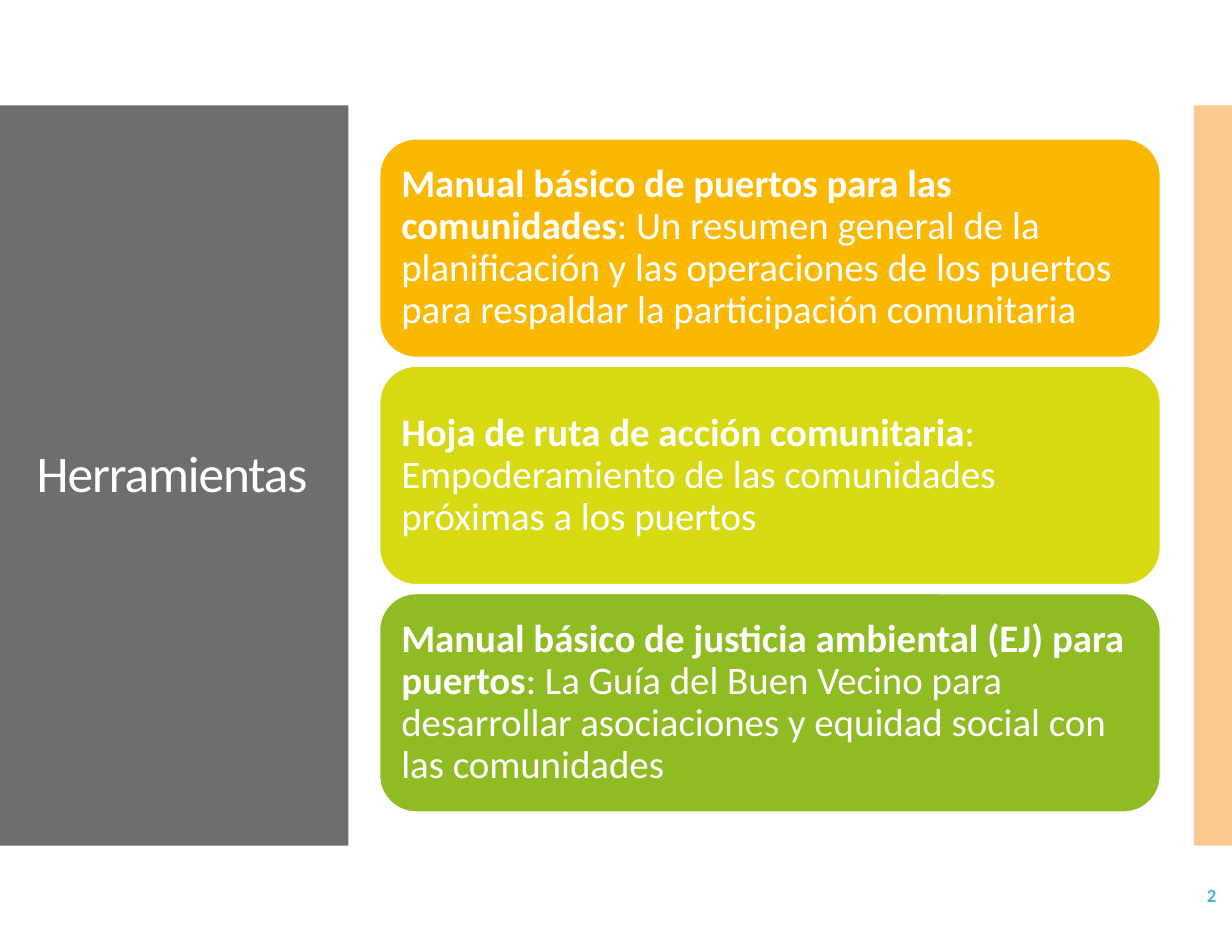
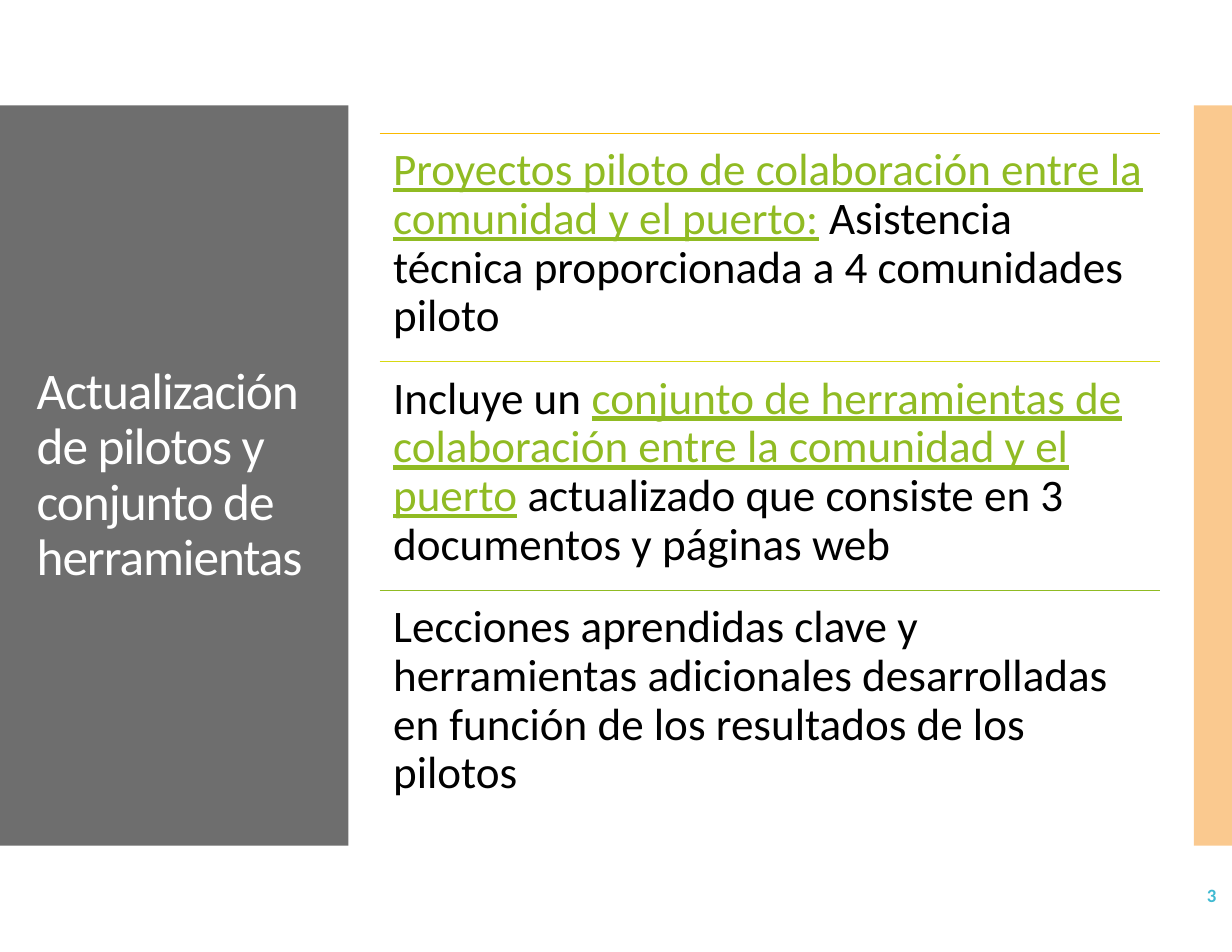
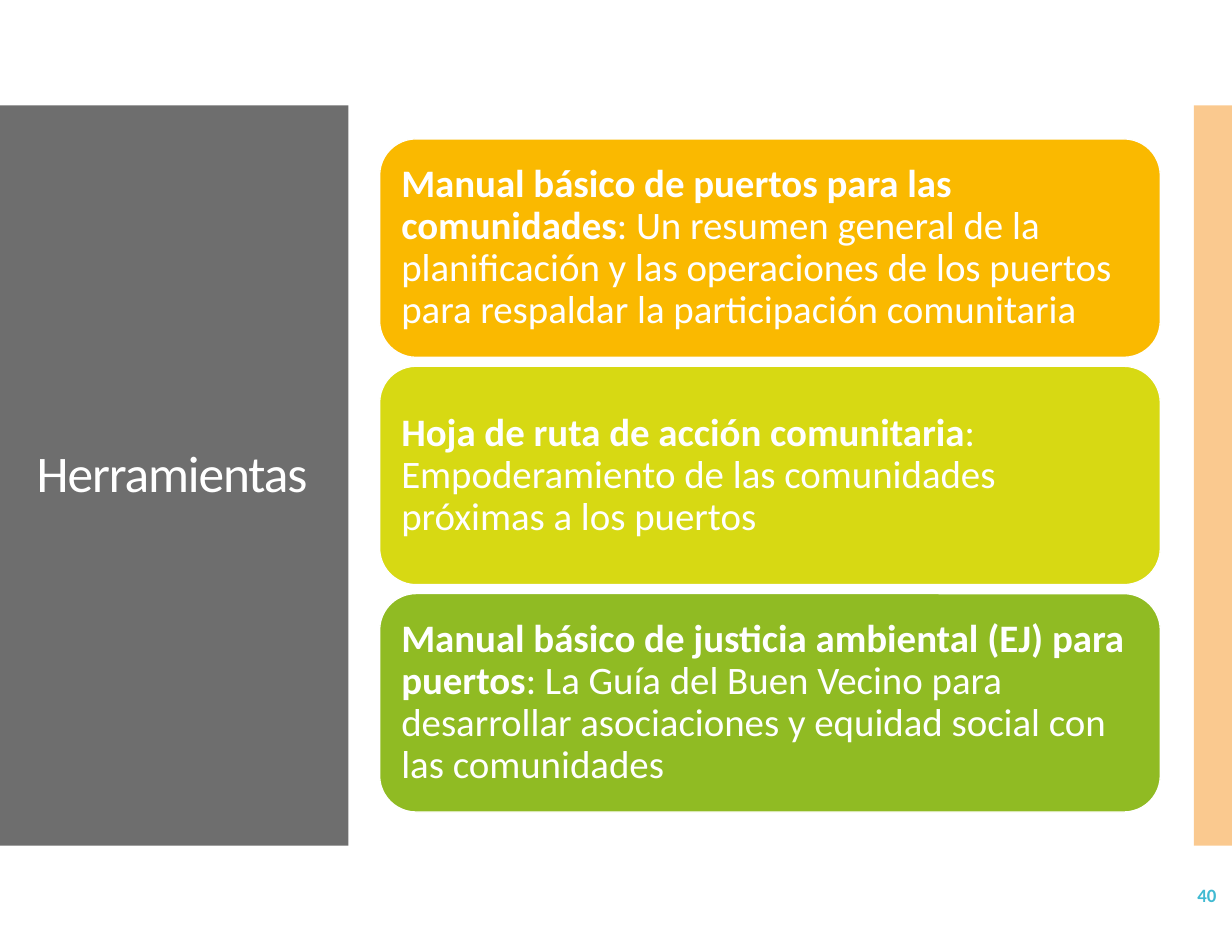
from lxml import etree
from pptx import Presentation
from pptx.dml.color import RGBColor
from pptx.enum import shapes, text
from pptx.oxml import ns
from pptx.util import Inches, Pt

HUE = {
    "panel": "6E6E6E", "edge": "F79421", "page": "40BAD2",
    "white": "FFFFFF", "black": "000000",
    "gold": "FAB900", "lime": "D7D913", "green": "90BB23",
}
TRIO = ("gold", "lime", "green")
FONT = "Calibri"

# Boxes: left, top, width, height in inches
PANEL = (0, 0.94, 3.11, 6.61)
EDGE = (10.66, 0.94, 0.34, 6.61)
TITLE = (0.23, 1.48, 2.77, 5.54)
PAGE = (9.59, 7.77, 1.38, 0.44)
CARDS = (3.39, 1.24, 6.97, 6.01)
ROWS = (3.39, 1.19, 6.97, 6.12)

# Each entry: bold lead, plain rest
TOOLS = [
    ("Manual básico de puertos para las comunidades",
     ": Un resumen general de la planificación y las operaciones de los "
     "puertos para respaldar la participación comunitaria"),
    ("Hoja de ruta de acción comunitaria",
     ": Empoderamiento de las comunidades próximas a los puertos"),
    ("Manual básico de justicia ambiental (EJ) para puertos",
     ": La Guía del Buen Vecino para desarrollar asociaciones y equidad "
     "social con las comunidades"),
]

# Each entry: pieces of text, True where underlined
PILOTS = [
    [("Proyectos piloto de colaboración entre la comunidad y el puerto:", True),
     (" Asistencia técnica proporcionada a 4 comunidades piloto", False)],
    [("Incluye un ", False),
     ("conjunto de herramientas de colaboración entre la comunidad y el "
      "puerto", True),
     (" actualizado que consiste en 3 documentos y páginas web", False)],
    [("Lecciones aprendidas clave y herramientas adicionales desarrolladas "
      "en función de los resultados de los pilotos", False)],
]


def tint(name):
    return RGBColor.from_string(HUE[name])


def split(box, count, gap=0):
    """Cut a box into equal rows."""
    x, y, w, h = box
    step = (h + gap) / count
    return [(x, y + i * step, w, step - gap) for i in range(count)]


def block(slide, box, hue, kind=shapes.MSO_SHAPE.RECTANGLE):
    shape = slide.shapes.add_shape(kind, *map(Inches, box))
    shape.shadow.inherit = False
    shape.fill.solid()
    shape.fill.fore_color.rgb = tint(hue)
    shape.line.fill.background()
    return shape


def setup(shape, size, hue, pad=(0.1, 0.05), anchor=text.MSO_ANCHOR.MIDDLE):
    """Prepare the text frame and return its paragraph."""
    frame = shape.text_frame
    frame.word_wrap = True
    frame.vertical_anchor = anchor
    frame.margin_left = frame.margin_right = Inches(pad[0])
    frame.margin_top = frame.margin_bottom = Inches(pad[1])
    para = frame.paragraphs[0]
    para.alignment = text.PP_ALIGN.LEFT
    para.line_spacing = 0.9
    font = para.font
    font.name, font.size = FONT, Pt(size)
    font.color.rgb = tint(hue)
    return para


def write(para, words):
    run = para.add_run()
    run.text = words
    return run


def label(slide, box, *args, **kwargs):
    shape = slide.shapes.add_textbox(*map(Inches, box))
    return setup(shape, *args, **kwargs)


def base(deck, title, page):
    """Side panel, edge band, title and page number."""
    slide = deck.slides.add_slide(deck.slide_layouts[6])
    block(slide, PANEL, "panel")
    edge = block(slide, EDGE, "edge")
    color = edge.fill._xPr.find(".//" + ns.qn("a:srgbClr"))
    etree.SubElement(color, ns.qn("a:alpha"), val="50000")

    run = write(label(slide, TITLE, 33, "white"), title)
    run._r.get_or_add_rPr().set("spc", "-70")

    para = label(slide, PAGE, 12.1, "page", pad=(0.11, 0.06))
    para.alignment = text.PP_ALIGN.RIGHT
    para.line_spacing = 1
    para.space_after = Pt(6.6)
    para.font.bold = True
    write(para, str(page))
    return slide


def cards(slide, box, items):
    """Stack of rounded cards."""
    for spot, hue, (lead, rest) in zip(split(box, len(items), 0.08), TRIO, items):
        card = block(slide, spot, hue, shapes.MSO_SHAPE.ROUNDED_RECTANGLE)
        card.line.color.rgb = tint("white")
        card.line.width = Pt(0.85)
        para = setup(card, 25, "white", pad=(0.1, 0.1))
        write(para, lead).font.bold = True
        write(para, rest)


def rows(slide, box, items):
    """Text rows, each under a coloured rule."""
    for spot, hue, parts in zip(split(box, len(items)), TRIO, items):
        x, y, w, _ = spot
        rule = slide.shapes.add_connector(
            shapes.MSO_CONNECTOR.STRAIGHT, *map(Inches, (x, y, x + w, y)))
        rule.line.color.rgb = tint(hue)
        rule.line.width = Pt(0.85)
        etree.SubElement(rule._element.spPr, ns.qn("a:effectLst"))
        para = label(slide, spot, 29, "black", pad=(0.12, 0.12),
                     anchor=text.MSO_ANCHOR.TOP)
        for words, lined in parts:
            run = write(para, words)
            if lined:
                run.font.underline = True
                run.font.color.rgb = tint("green")


def main():
    deck = Presentation()
    deck.slide_width, deck.slide_height = Inches(11), Inches(8.5)
    cards(base(deck, "Herramientas", 2), CARDS, TOOLS)
    rows(base(deck, "Actualización de pilotos y conjunto de herramientas", 3),
         ROWS, PILOTS)
    cards(base(deck, "Herramientas", 40), CARDS, TOOLS)
    deck.save("out.pptx")


if __name__ == "__main__":
    main()
